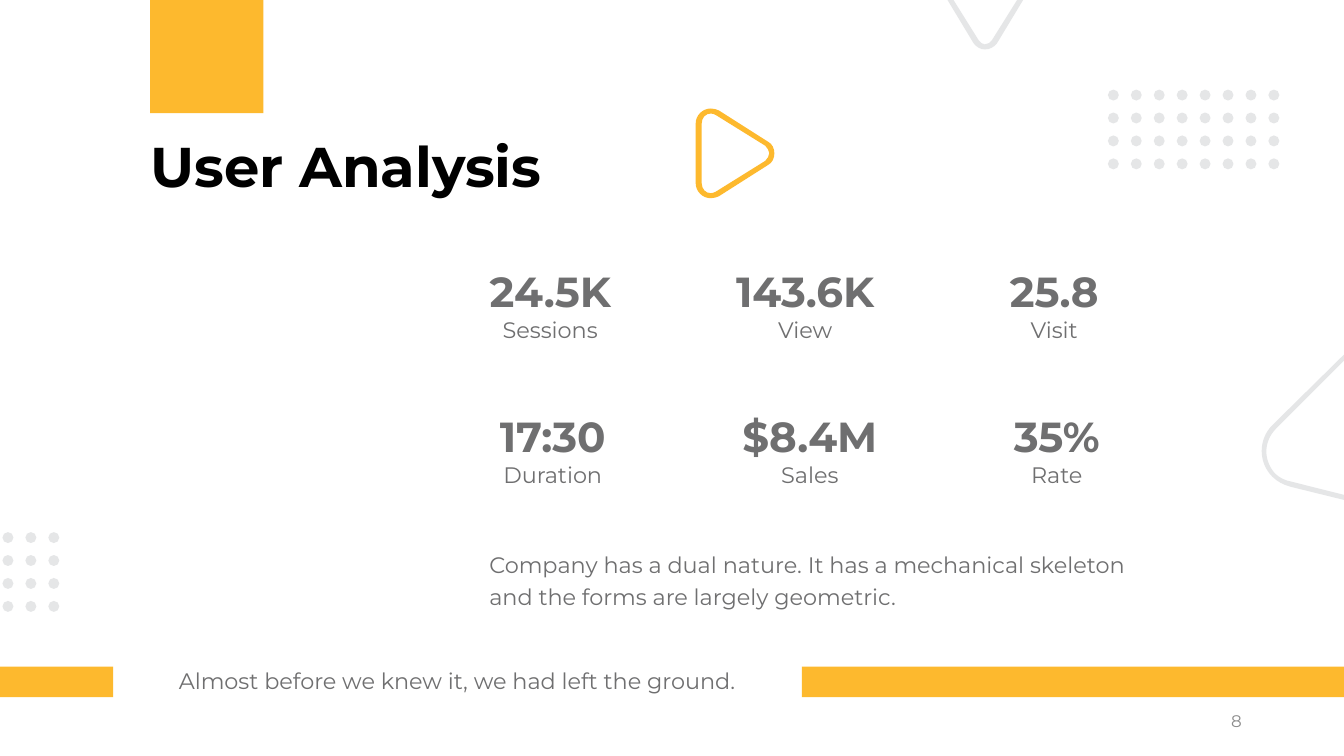
from lxml import etree
from pptx import Presentation
from pptx.dml.color import RGBColor
from pptx.enum import shapes, text
from pptx.oxml import ns
from pptx.util import Pt

HUE = {"gold": "FDB92E", "pale": "E5E6E7", "gray": "6F6F70",
       "mute": "8C8C8C", "black": "000000"}
FACE = "Montserrat"

# Outlines: a pair is a line end, six numbers are a cubic curve
PEAK = [[(0, 0), (18.7, 31), (20.9, 33.8, 23.8, 35.3, 26.6, 35.3),
         (30.2, 35.3, 33.1, 33.8, 35.3, 31), (54, 0), (49.7, 0),
         (31.7, 28.8), (31, 30.2, 28.8, 31.7, 26.6, 31.7),
         (25.2, 31.7, 23, 30.2, 22.3, 28.8), (4.3, 0)]]
WEDGE = [[(61.2, 103.7), (23, 94.3), (18, 92.9, 13.7, 90.7, 10.1, 87.1),
          (0, 77, 0, 60.5, 10.1, 50.4), (61.2, 0), (61.2, 4.3),
          (13, 52.6), (3.6, 61.9, 3.6, 75.6, 12.2, 85),
          (15.1, 87.8, 19.4, 90, 23.8, 90.7), (61.2, 100.1)]]
PLAY = [[(16.6, 1.4), (51.8, 23.8), (54.7, 25.2, 56.2, 28.8, 56.2, 32),
         (56.2, 35.3, 54.7, 38.9, 51.8, 40.3), (16.6, 62.7),
         (15.1, 63.4, 13, 64.1, 10.8, 64.1), (5, 64.1, 0, 59.3, 0, 53.3),
         (0, 10.8), (0, 4.8, 5, 0, 10.8, 0), (13, 0, 15.1, 0.7, 16.6, 1.4)],
        [(14.4, 4.7), (13.7, 4.3, 12.2, 3.6, 10.8, 3.6),
         (7.2, 3.6, 4.3, 6.5, 4.3, 10.8), (4.3, 53.3),
         (4.3, 57.6, 7.2, 60.5, 10.8, 60.5),
         (12.2, 60.5, 13.7, 59.8, 14.4, 59.4), (49.7, 37.4),
         (51.1, 36, 52.6, 33.8, 52.6, 32), (52.6, 30.2, 51.1, 28.1, 49.7, 26.6)]]

# Each figure: value, label, left, width
STATS = [[("24.5K", "Sessions", 349.5, 87.1), ("143.6K", "View", 525.1, 100.1),
          ("25.8", "Visit", 721, 64.1)],
         [("17:30", "Duration", 356.4, 77), ("$8.4M", "Sales", 529.9, 97.2),
          ("35%", "Rate", 723.6, 62.6)]]


def paint(form, hue):
    form.shadow.inherit = False
    form.fill.solid()
    form.fill.fore_color.rgb = RGBColor.from_string(HUE[hue])
    form.line.fill.background()


def block(slide, box, hue):
    paint(slide.shapes.add_shape(shapes.MSO_SHAPE.RECTANGLE, *map(Pt, box)), hue)


def rim(slide, rings, left, top, hue):
    """Lay out every point as a line end, then join threes into curves."""
    pen = None
    for ring in rings:
        pts = [(Pt(left + x), Pt(top + y)) for part in ring
               for x, y in zip(part[::2], part[1::2])]
        if pen:
            pen.move_to(*pts[0])
        else:
            pen = slide.shapes.build_freeform(*pts[0])
        pen.add_line_segments(pts[1:], close=True)
    form = pen.convert_to_shape()
    ends = iter(list(form._element.iter(ns.qn("a:lnTo"))))
    for part in (part for ring in rings for part in ring[1:]):
        node = next(ends)
        if len(part) == 6:
            curve = etree.Element(ns.qn("a:cubicBezTo"))
            node.addprevious(curve)
            for end in (node, next(ends), next(ends)):
                curve.append(end[0])
                end.getparent().remove(end)
    paint(form, hue)


def disc(x, y, r=3.9):
    """Circle around x, y as four curves."""
    k = 0.55 * r
    return [(x, y - r), (x + k, y - r, x + r, y - k, x + r, y),
            (x + r, y + k, x + k, y + r, x, y + r),
            (x - k, y + r, x - r, y + k, x - r, y),
            (x - r, y - k, x - k, y - r, x, y - r)]


def dots(slide, left, top, cols, rows=4, step=16.38, r=3.9):
    rings = [disc(r + col * step, r + row * step, r)
             for row in range(rows) for col in range(cols)]
    rim(slide, rings, left, top, "pale")


def write(slide, box, lines, wrap=True, inset=0, frame=None, **form):
    """Each line is (words, size, bold, hue); form holds paragraph values."""
    body = slide.shapes.add_textbox(*map(Pt, box)).text_frame
    look = {"word_wrap": wrap, "auto_size": text.MSO_AUTO_SIZE.SHAPE_TO_FIT_TEXT}
    look |= {"margin_" + side: Pt(inset)
             for side in ("left", "right", "top", "bottom")}
    for key, val in (look | (frame or {})).items():
        setattr(body, key, val)
    for n, (words, size, bold, hue) in enumerate(lines):
        para = body.add_paragraph() if n else body.paragraphs[0]
        for key, val in form.items():
            setattr(para, key, val)
        run = para.add_run()
        run.text = words
        for key, val in {"name": FACE, "size": Pt(size), "bold": bold}.items():
            setattr(run.font, key, val)
        run.font.color.rgb = RGBColor.from_string(HUE[hue])


def decor(slide):
    block(slide, (107.3, 0, 80.9, 80.9), "gold")
    dots(slide, 791.4, 64, 8)
    rim(slide, PEAK, 676.8, 0, "pale")
    rim(slide, WEDGE, 898.7, 253.4, "pale")
    rim(slide, PLAY, 496.9, 77.5, "gold")
    dots(slide, -14.6, 380.1, 4)


def stats(slide, top, pitch):
    for n, row in enumerate(STATS):
        for value, label, left, width in row:
            write(slide, (left, top + n * pitch, width, 55.4),
                  [(value, 30, True, "gray"), (label, 16, False, "gray")],
                  wrap=False, alignment=text.PP_ALIGN.CENTER)


def footer(slide, top):
    for left, width in ((0, 80.9), (572.8, 387.2)):
        block(slide, (left, top, width, 21.8), "gold")
    write(slide, (127.7, top + 0.2, 404.6, 19.4),
          [("Almost before we knew it, we had left the ground.", 16, False, "gray")],
          wrap=False)
    write(slide, (678.2, top + 24.3, 216, 28.8), [("8", 12, False, "mute")],
          inset=7.2, alignment=text.PP_ALIGN.RIGHT,
          frame={"vertical_anchor": text.MSO_ANCHOR.MIDDLE,
                 "auto_size": text.MSO_AUTO_SIZE.NONE})


def main():
    deck = Presentation()
    deck.slide_width, deck.slide_height = Pt(960), Pt(540)
    slide = deck.slides.add_slide(deck.slide_layouts[6])
    decor(slide)
    write(slide, (107.3, 99.4, 517, 43.9),
          [("User Analysis", 40, True, "black")], line_spacing=0.9)
    write(slide, (349.5, 389.5, 458.6, 44.6),
          [("Company has a dual nature. It has a mechanical skeleton and the "
            "forms are largely geometric.", 16, False, "gray")],
          line_spacing=1.2, space_before=Pt(10))
    stats(slide, 189.7, 103.6)
    footer(slide, 476.2)
    deck.save("out.pptx")


if __name__ == "__main__":
    main()
